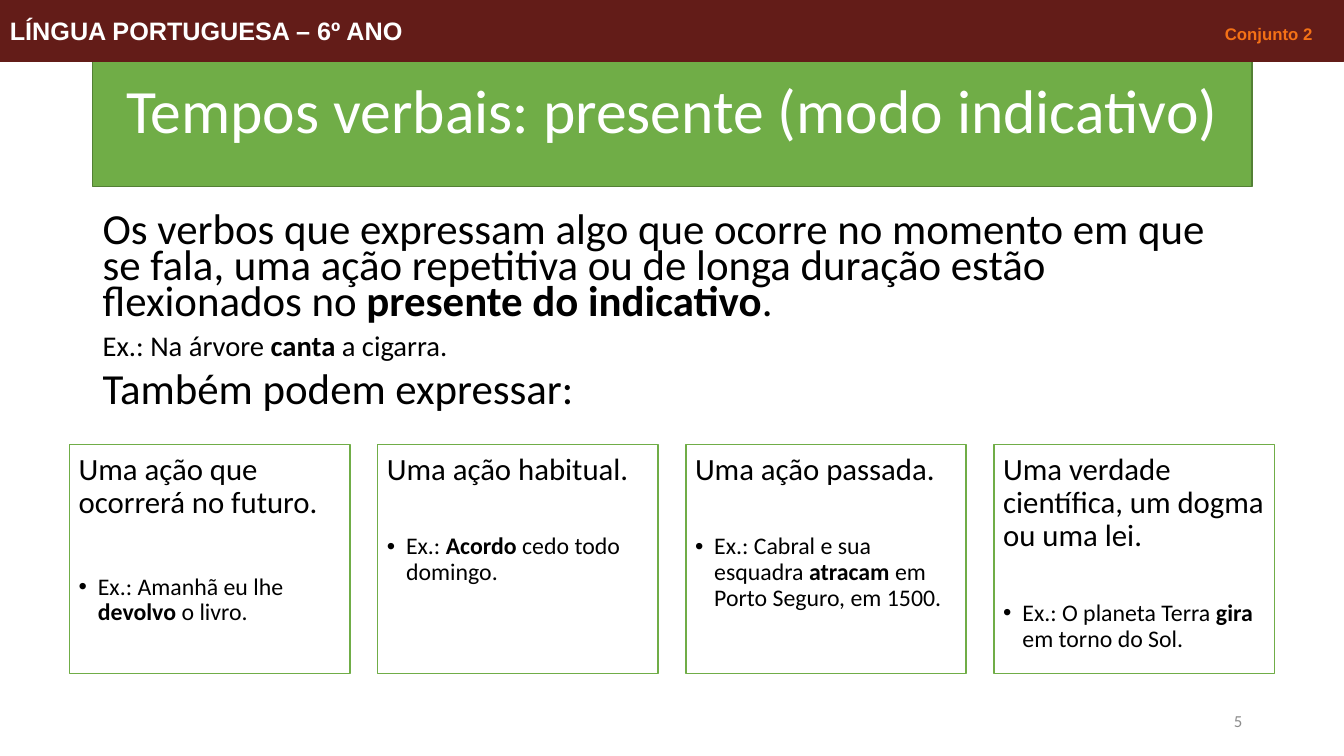
from dataclasses import dataclass

from lxml.etree import SubElement
from pptx import Presentation
from pptx.dml.color import RGBColor
from pptx.enum.shapes import MSO_SHAPE
from pptx.enum.text import MSO_ANCHOR, PP_ALIGN
from pptx.oxml.ns import qn
from pptx.util import Inches, Pt


@dataclass(frozen=True)
class Theme:
    body_font: str = "Calibri"
    header_font: str = "Arial"
    maroon: str = "631C18"
    orange: str = "F47116"
    green: str = "70AD47"
    dark_green: str = "538035"
    white: str = "FFFFFF"
    black: str = "000000"
    grey: str = "8C8C8C"
    title: float = 44
    statement: float = 30.6
    sample: float = 20.4
    card_heading: float = 22
    card_example: float = 17
    subject: float = 18
    small: float = 12


THEME = Theme()

STATEMENTS = [
    (["Os verbos que expressam algo que ocorre no momento em que se fala, uma ação "
      "repetitiva ou de longa duração estão flexionados no ",
      "presente do indicativo", "."], THEME.statement),
    (["Ex.: Na árvore ", "canta", " a cigarra."], THEME.sample),
    (["Também podem expressar:"], THEME.statement),
]

# Heading, example (plain, bold, plain), space between them in points
USES = [
    ("Uma ação que ocorrerá no futuro.",
     ["Ex.: Amanhã eu lhe ", "devolvo", " o livro."], 39),
    ("Uma ação habitual.",
     ["Ex.: ", "Acordo", " cedo todo domingo."], 34),
    ("Uma ação passada.",
     ["Ex.: Cabral e sua esquadra ", "atracam", " em Porto Seguro, em 1500."], 34),
    ("Uma verdade científica, um dogma ou uma lei.",
     ["Ex.: O planeta Terra ", "gira", " em torno do Sol."], 34),
]


def style(run, size, color=THEME.black, bold=False, font=THEME.body_font):
    run.font.name = font
    run.font.size = Pt(size)
    run.font.bold = bold
    run.font.color.rgb = RGBColor.from_string(color)


def write(paragraph, pieces, size, color=THEME.black):
    """Add the pieces as runs; every second piece is bold."""
    for index, piece in enumerate(pieces):
        run = paragraph.add_run()
        run.text = piece
        style(run, size, color, bold=index % 2 == 1)


def add_panel(slide, box, fill, line, line_width, anchor):
    panel = slide.shapes.add_shape(MSO_SHAPE.RECTANGLE, *map(Inches, box))
    panel.shadow.inherit = False
    panel.fill.solid()
    panel.fill.fore_color.rgb = RGBColor.from_string(fill)
    panel.line.color.rgb = RGBColor.from_string(line)
    panel.line.width = Pt(line_width)
    frame = panel.text_frame
    frame.word_wrap = True
    frame.vertical_anchor = anchor
    frame.paragraphs[0].alignment = PP_ALIGN.LEFT
    return frame


def add_text_area(slide, box, anchor):
    frame = slide.shapes.add_textbox(*map(Inches, box)).text_frame
    frame.word_wrap = True
    frame.vertical_anchor = anchor
    return frame


def add_bullet(paragraph, indent):
    properties = paragraph._p.get_or_add_pPr()
    properties.set("marL", str(Inches(indent)))
    properties.set("indent", str(-Inches(indent)))
    SubElement(properties, qn("a:buFont"), typeface=THEME.header_font)
    SubElement(properties, qn("a:buChar"), char="•")


def add_right_tab(paragraph, position):
    tabs = SubElement(paragraph._p.get_or_add_pPr(), qn("a:tabLst"))
    SubElement(tabs, qn("a:tab"), pos=str(Inches(position)), algn="r")


def add_title(slide, box):
    frame = add_panel(slide, box, THEME.green, THEME.dark_green, 1, MSO_ANCHOR.MIDDLE)
    title = frame.paragraphs[0]
    title.alignment = PP_ALIGN.CENTER
    title.line_spacing = 0.9
    write(title, ["Tempos verbais: presente (modo indicativo)"], THEME.title, THEME.white)


def add_statements(slide, box):
    frame = add_text_area(slide, box, MSO_ANCHOR.TOP)
    for index, (pieces, size) in enumerate(STATEMENTS):
        statement = frame.add_paragraph() if index else frame.paragraphs[0]
        statement.line_spacing = 0.7
        statement.space_before = Pt(10)
        write(statement, pieces, size)


def add_use_card(slide, box, heading_text, example_pieces, gap):
    frame = add_panel(slide, box, THEME.white, THEME.green, 1, MSO_ANCHOR.TOP)
    frame.margin_left = frame.margin_right = Inches(0.09)
    frame.margin_top = frame.margin_bottom = Inches(0.09)
    heading = frame.paragraphs[0]
    heading.line_spacing = 0.9
    write(heading, [heading_text], THEME.card_heading)
    example = frame.add_paragraph()
    example.alignment = PP_ALIGN.LEFT
    example.line_spacing = 0.9
    example.space_before = Pt(gap)
    add_bullet(example, 0.19)
    write(example, example_pieces, THEME.card_example)


def add_use_cards(slide, box, card_width):
    left, top, width, height = box
    pitch = (width - card_width) / (len(USES) - 1)
    for index, use in enumerate(USES):
        add_use_card(slide, (left + index * pitch, top, card_width, height), *use)


def add_page_number(slide, box):
    number = add_text_area(slide, box, MSO_ANCHOR.MIDDLE).paragraphs[0]
    number.alignment = PP_ALIGN.RIGHT
    write(number, ["5"], THEME.small, THEME.grey)


def add_header(slide, box):
    frame = add_panel(slide, box, THEME.maroon, THEME.maroon, 0.75, MSO_ANCHOR.MIDDLE)
    header = frame.paragraphs[0]
    add_right_tab(header, box[2] - 0.41)
    for text, size, color in [
        ("LÍNGUA PORTUGUESA – 6º ANO\t", THEME.subject, THEME.white),
        ("Conjunto 2", THEME.small, THEME.orange),
    ]:
        run = header.add_run()
        run.text = text
        style(run, size, color, bold=True, font=THEME.header_font)


def main():
    deck = Presentation()
    deck.slide_width, deck.slide_height = Inches(13.33), Inches(7.5)
    slide = deck.slides.add_slide(deck.slide_layouts[6])
    add_title(slide, (0.92, 0.4, 11.5, 1.45))
    add_statements(slide, (0.92, 2.09, 11.5, 2.22))
    add_use_cards(slide, (0.69, 4.41, 11.95, 2.27), card_width=2.78)
    add_page_number(slide, (9.42, 6.95, 3, 0.4))
    add_header(slide, (0, 0, 13.33, 0.61))
    deck.save("out.pptx")


if __name__ == "__main__":
    main()
